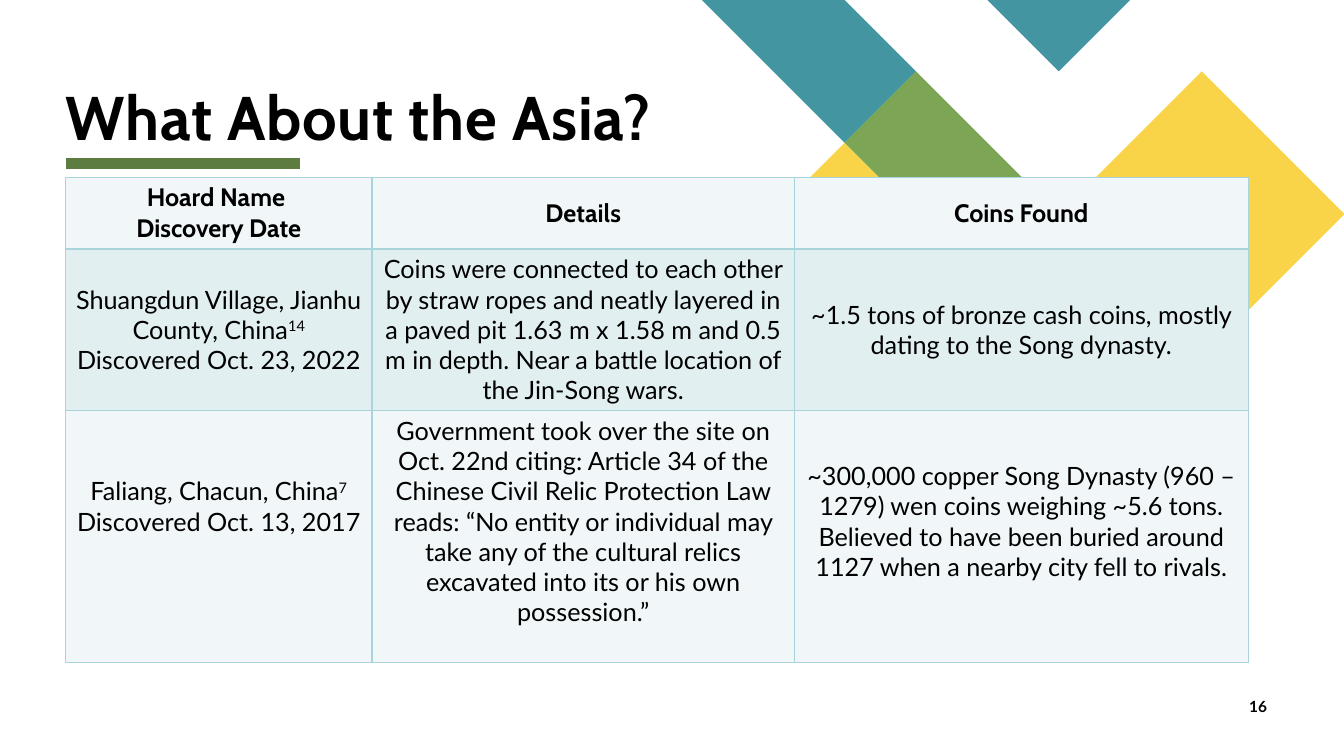
import dataclasses
import typing

import lxml.etree
import pptx
import pptx.dml.color
import pptx.enum.shapes
import pptx.enum.text
import pptx.oxml.ns
import pptx.util

Inches = pptx.util.Inches
ALIGN = pptx.enum.text.PP_ALIGN
ANCHOR = pptx.enum.text.MSO_ANCHOR

COLOURS = {
    "black": "000000",
    "teal": "4495A2",
    "yellow": "F9D448",
    "green": "7CA655",
    "underline": "5D7D40",
    "border": "A9D4DB",
    "pale": "F1F7F8",
    "band": "E2EFF1",
}
LATTICE_LEFT = Inches(6.96)
LATTICE_STEP = Inches(8.5) / 12
COLUMN_WIDTHS = (3.04, 4.19, 4.5)
Point = typing.Tuple[int, int]


@dataclasses.dataclass(frozen=True)
class Band:
    colour: str
    contours: typing.Tuple[typing.Tuple[Point, ...], ...]


@dataclasses.dataclass(frozen=True)
class Line:
    text: str
    reference: str = ""


@dataclasses.dataclass(frozen=True)
class Cell:
    lines: typing.Tuple[Line, ...]
    bottom: float = 0.05


@dataclasses.dataclass(frozen=True)
class Row:
    height: float
    fill: str
    cells: typing.Tuple[Cell, ...]
    font: str = "Lato"
    bold: bool = False


BANDS = (
    Band("teal", (((3, 1), (2, 0), (0, 0), (2, 2)), ((6, 4), (5, 3), (4, 4), (5, 5)))),
    Band("yellow", (((2, 2), (1, 3), (3, 5), (4, 4)),)),
    Band("teal", (((6, 0), (4, 0), (5, 1)),)),
    Band("green", (((3, 1), (2, 2), (4, 4), (5, 3)),)),
    Band("yellow", (((9, 3), (7, 1), (5, 3), (7, 5)),)),
)

ROWS = (
    Row(0.71, "pale", (
        Cell((Line("Hoard Name "), Line("Discovery Date"))),
        Cell((Line("Details"),)),
        Cell((Line("Coins Found"),)),
    ), font="Cabin", bold=True),
    Row(1.6, "band", (
        Cell((Line("Shuangdun Village, Jianhu County, China", "14"),
              Line("Discovered Oct. 23, 2022"))),
        Cell((Line("Coins were connected to each other by straw ropes and neatly "
                   "layered in a paved pit 1.63 m x 1.58 m and 0.5 m in depth. "
                   "Near a battle location of the Jin-Song wars."),)),
        Cell((Line("~1.5 tons of bronze cash coins, mostly dating to the Song dynasty."),)),
    )),
    Row(2.5, "pale", (
        Cell((Line("Faliang, Chacun, China", "7"), Line("Discovered Oct. 13, 2017")), 0.65),
        Cell((Line("Government took over the site on Oct. 22nd citing: Article 34 of the "
                   "Chinese Civil Relic Protection Law reads: “No entity or individual "
                   "may take any of the cultural relics excavated into its or his own "
                   "possession.”"),), 0.35),
        Cell((Line("~300,000 copper Song Dynasty (960 – 1279) wen coins weighing ~5.6 tons. "
                   "Believed to have been buried around 1127 when a nearby city fell to "
                   "rivals."),), 0.35),
    )),
)


def colour(name: str) -> pptx.dml.color.RGBColor:
    return pptx.dml.color.RGBColor.from_string(COLOURS[name])


def write_text(text_frame, lines: typing.Sequence[Line], *, size: float, font: str,
               bold: bool = False, alignment=ALIGN.LEFT, line_spacing: float = 1.0,
               letter_spacing: float = 0) -> None:
    for index, line in enumerate(lines):
        paragraph = text_frame.add_paragraph() if index else text_frame.paragraphs[0]
        paragraph.alignment = alignment
        paragraph.line_spacing = line_spacing
        for text, baseline in ((line.text, 0), (line.reference, 30000)):
            if not text:
                continue
            run = paragraph.add_run()
            run.text = text
            run.font.size = pptx.util.Pt(size)
            run.font.name = font
            run.font.bold = bold
            run.font.color.rgb = colour("black")
            properties = run._r.get_or_add_rPr()
            if baseline:
                properties.set("baseline", str(baseline))
            if letter_spacing:
                properties.set("spc", str(round(letter_spacing * 100)))


def clear_margins(text_frame) -> None:
    text_frame.margin_left = text_frame.margin_right = 0
    text_frame.margin_top = text_frame.margin_bottom = 0
    text_frame.word_wrap = True


def draw_band(slide, band: Band) -> None:
    first, *others = band.contours
    builder = slide.shapes.build_freeform(*first[0], scale=LATTICE_STEP)
    builder.add_line_segments(first[1:], close=True)
    for contour in others:
        builder.move_to(*contour[0])
        builder.add_line_segments(contour[1:], close=True)
    shape = builder.convert_to_shape(LATTICE_LEFT, 0)
    shape.shadow.inherit = False
    shape.fill.solid()
    shape.fill.fore_color.rgb = colour(band.colour)
    shape.line.fill.background()


def draw_underline(slide) -> None:
    underline = slide.shapes.add_connector(
        pptx.enum.shapes.MSO_CONNECTOR.STRAIGHT,
        Inches(0.65), Inches(1.62), Inches(2.98), Inches(1.62))
    underline.line.color.rgb = colour("underline")
    underline.line.width = pptx.util.Pt(8)
    lxml.etree.SubElement(underline._element.spPr, pptx.oxml.ns.qn("a:effectLst"))


def add_borders(table_cell) -> None:
    properties = table_cell._tc.get_or_add_tcPr()
    for index, side in enumerate(("lnL", "lnR", "lnT", "lnB")):
        border = lxml.etree.Element(pptx.oxml.ns.qn(f"a:{side}"), w=str(pptx.util.Pt(1)))
        fill = lxml.etree.SubElement(border, pptx.oxml.ns.qn("a:solidFill"))
        lxml.etree.SubElement(fill, pptx.oxml.ns.qn("a:srgbClr"), val=COLOURS["border"])
        properties.insert(index, border)


def draw_table(slide) -> None:
    table = slide.shapes.add_table(
        len(ROWS), len(COLUMN_WIDTHS), Inches(0.65), Inches(1.76),
        Inches(sum(COLUMN_WIDTHS)), Inches(sum(row.height for row in ROWS))).table
    table.first_row = table.horz_banding = False
    for column, width in zip(table.columns, COLUMN_WIDTHS):
        column.width = Inches(width)
    for table_row, row in zip(table.rows, ROWS):
        table_row.height = Inches(row.height)
        for table_cell, cell in zip(table_row.cells, row.cells):
            table_cell.fill.solid()
            table_cell.fill.fore_color.rgb = colour(row.fill)
            table_cell.vertical_anchor = ANCHOR.MIDDLE
            table_cell.margin_bottom = Inches(cell.bottom)
            add_borders(table_cell)
            write_text(table_cell.text_frame, cell.lines, size=18, font=row.font,
                       bold=row.bold, alignment=ALIGN.CENTER)


def main() -> None:
    presentation = pptx.Presentation()
    presentation.slide_width = Inches(13.33)
    presentation.slide_height = Inches(7.5)
    slide = presentation.slides.add_slide(presentation.slide_layouts[5])
    for band in BANDS:
        draw_band(slide, band)
    draw_underline(slide)

    title = slide.shapes.title
    title.left, title.top = Inches(0.65), Inches(0.21)
    title.width, title.height = Inches(7.86), Inches(1.3)
    clear_margins(title.text_frame)
    title.text_frame.auto_size = pptx.enum.text.MSO_AUTO_SIZE.NONE
    title.text_frame.vertical_anchor = ANCHOR.BOTTOM
    write_text(title.text_frame, [Line("What About the Asia?")], size=44, font="Cabin",
               bold=True, line_spacing=0.8, letter_spacing=0.5)

    draw_table(slide)
    page_number = slide.shapes.add_textbox(
        Inches(12.39), Inches(6.92), Inches(0.57), Inches(0.27))
    clear_margins(page_number.text_frame)
    write_text(page_number.text_frame, [Line("16")], size=11, font="Lato", bold=True)
    presentation.save("out.pptx")


if __name__ == "__main__":
    main()
